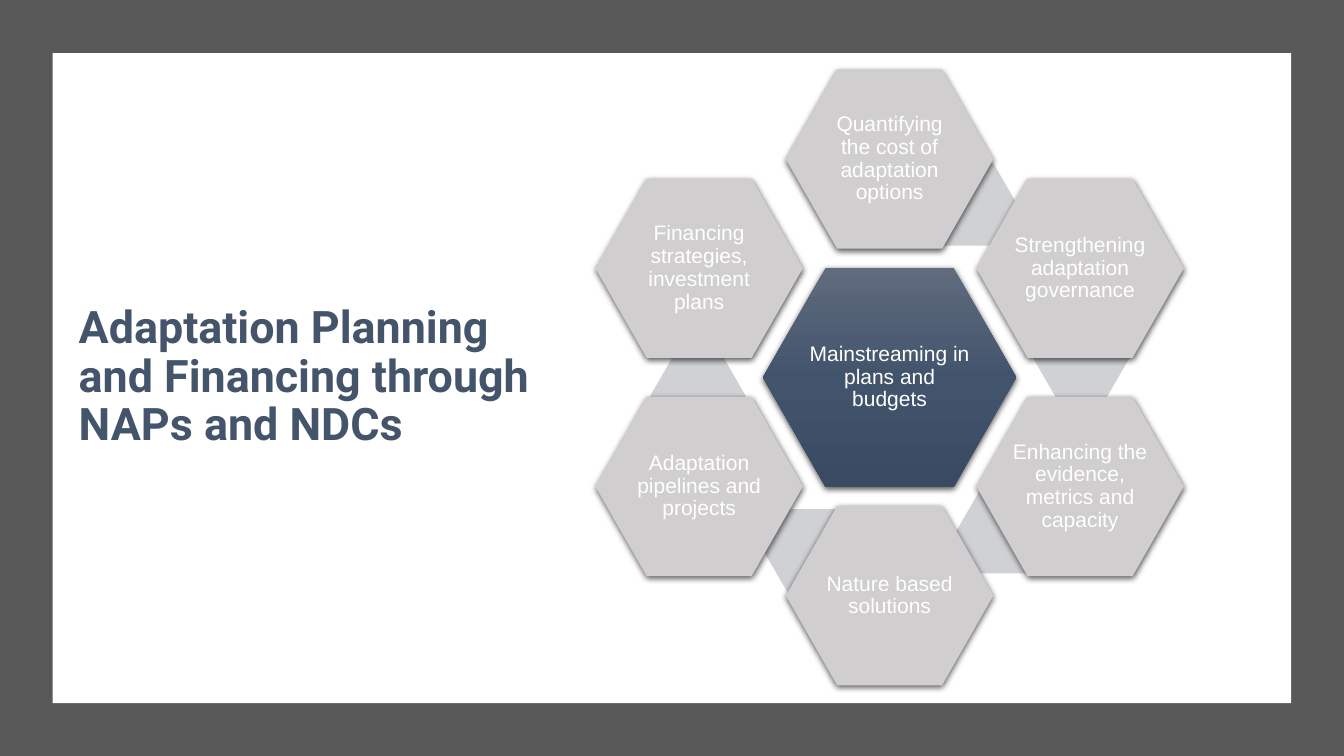
from lxml import etree
from pptx import Presentation
from pptx import util as u
from pptx.dml.color import RGBColor
from pptx.enum import shapes, text
from pptx.oxml import ns

COLORS = {
    "frame": "595959",
    "panel": "FFFFFF",
    "title": "44546A",
    "label": "FFFFFF",
    "ring": "D0CECE",
    "link": "CFD1D4",
    "core_top": "606B7D",
    "core_middle": "42546C",
    "core_bottom": "394A62",
    "shadow": "000000",
}

CENTER = (22.42, 9.51)
CORE_SIZE = (6.38, 5.51)
RING_SIZE = (5.23, 4.52)
LINK_SIZE = (2.41, 2.08)
COLUMN, ROW = 4.8, 2.75

RING = [
    (0, -2, "Quantifying the cost of adaptation options", (2.01, -4.36)),
    (1, -1, "Strengthening adaptation governance", (4.83, -0.47)),
    (1, 1, "Enhancing the evidence, metrics and capacity", (2.87, 3.9)),
    (0, 2, "Nature based solutions", (-1.98, 4.36)),
    (-1, 1, "Adaptation pipelines and projects", (-4.83, 0.47)),
    (-1, -1, "Financing strategies, investment plans", None),
]


def add_xml(parent, tag, **attrs):
    return etree.SubElement(parent, ns.qn(tag), attrs)


class Deck:
    title_font = {"name": "Roboto", "size": u.Pt(32), "bold": True}
    label_font = {"name": "Arial", "size": u.Pt(15), "bold": False}
    title_frame = {"word_wrap": True, "auto_size": text.MSO_AUTO_SIZE.NONE,
                   "vertical_anchor": text.MSO_ANCHOR.MIDDLE}
    label_frame = {**title_frame, "margin_left": u.Cm(0.05),
                   "margin_right": u.Cm(0.05), "margin_top": u.Cm(0.05),
                   "margin_bottom": u.Cm(0.05)}

    def __init__(self, prs):
        self.s = prs.slides.add_slide(prs.slide_layouts[5])

    def apply(self, target, values):
        for name, value in values.items():
            setattr(target, name, value)

    def set_text(self, sp, words, frame, font, color, align):
        tf = sp.text_frame
        self.apply(tf, frame)
        p = tf.paragraphs[0]
        self.apply(p, {"alignment": align, "line_spacing": 0.9})
        r = p.add_run()
        r.text = words
        self.apply(r.font, font)
        r.font.color.rgb = RGBColor.from_string(COLORS[color])

    def shape(self, kind, left, top, width, height, color):
        sp = self.s.shapes.add_shape(kind, *map(u.Cm, (left, top, width, height)))
        sp.fill.solid()
        sp.fill.fore_color.rgb = RGBColor.from_string(COLORS[color])
        sp.line.fill.background()
        sp.shadow.inherit = False
        return sp

    def panel(self, left, top, width, height, color):
        return self.shape(shapes.MSO_SHAPE.RECTANGLE, left, top, width, height, color)

    def hexagon(self, offset, size, color, slant=0.286):
        left, top = (c + d - n / 2 for c, d, n in zip(CENTER, offset, size))
        sp = self.shape(shapes.MSO_SHAPE.HEXAGON, left, top, *size, color)
        sp.adjustments[0] = slant
        return sp

    def topic(self, offset, size, color, words):
        sp = self.hexagon(offset, size, color)
        self.shadow(sp)
        self.set_text(sp, words, self.label_frame, self.label_font, "label",
                      text.PP_ALIGN.CENTER)
        return sp

    def shadow(self, sp):
        effects = sp.element.spPr.find(ns.qn("a:effectLst"))
        outer = add_xml(effects, "a:outerShdw", blurRad=str(u.Pt(4.5)),
                        dist=str(u.Pt(1.5)), dir="5400000", algn="ctr",
                        rotWithShape="0")
        clr = add_xml(outer, "a:srgbClr", val=COLORS["shadow"])
        add_xml(clr, "a:alpha", val="63000")

    def gradient(self, sp, names):
        grad = etree.Element(ns.qn("a:gradFill"), rotWithShape="1")
        stops = add_xml(grad, "a:gsLst")
        for i, name in enumerate(names):
            stop = add_xml(stops, "a:gs", pos=str(i * 100000 // (len(names) - 1)))
            add_xml(stop, "a:srgbClr", val=COLORS[name])
        add_xml(grad, "a:lin", ang="5400000", scaled="0")
        spPr = sp.element.spPr
        spPr.replace(spPr.find(ns.qn("a:solidFill")), grad)

    def title(self, words, left, top, width, height):
        sp = self.s.shapes.title
        self.apply(sp, {"left": u.Cm(left), "top": u.Cm(top),
                        "width": u.Cm(width), "height": u.Cm(height)})
        self.set_text(sp, words, self.title_frame, self.title_font, "title",
                      text.PP_ALIGN.LEFT)
        sp.element.getparent().append(sp.element)


def main():
    prs = Presentation()
    prs.slide_width, prs.slide_height = u.Cm(33.87), u.Cm(19.05)
    deck = Deck(prs)
    deck.panel(0, 0, 33.87, 19.05, "frame")
    deck.panel(1.33, 1.34, 31.21, 16.38, "panel")
    deck.title("Adaptation Planning and Financing through NAPs and NDCs",
               1.73, 3.23, 12.12, 12.57)
    core = deck.topic((0, 0), CORE_SIZE, "core_middle",
                      "Mainstreaming in plans and budgets")
    deck.gradient(core, ["core_top", "core_middle", "core_bottom"])
    for column, row, words, link in RING:
        if link:
            deck.hexagon(link, LINK_SIZE, "link", 0.289)
        deck.topic((column * COLUMN, row * ROW), RING_SIZE, "ring", words)
    prs.save("out.pptx")


if __name__ == "__main__":
    main()
